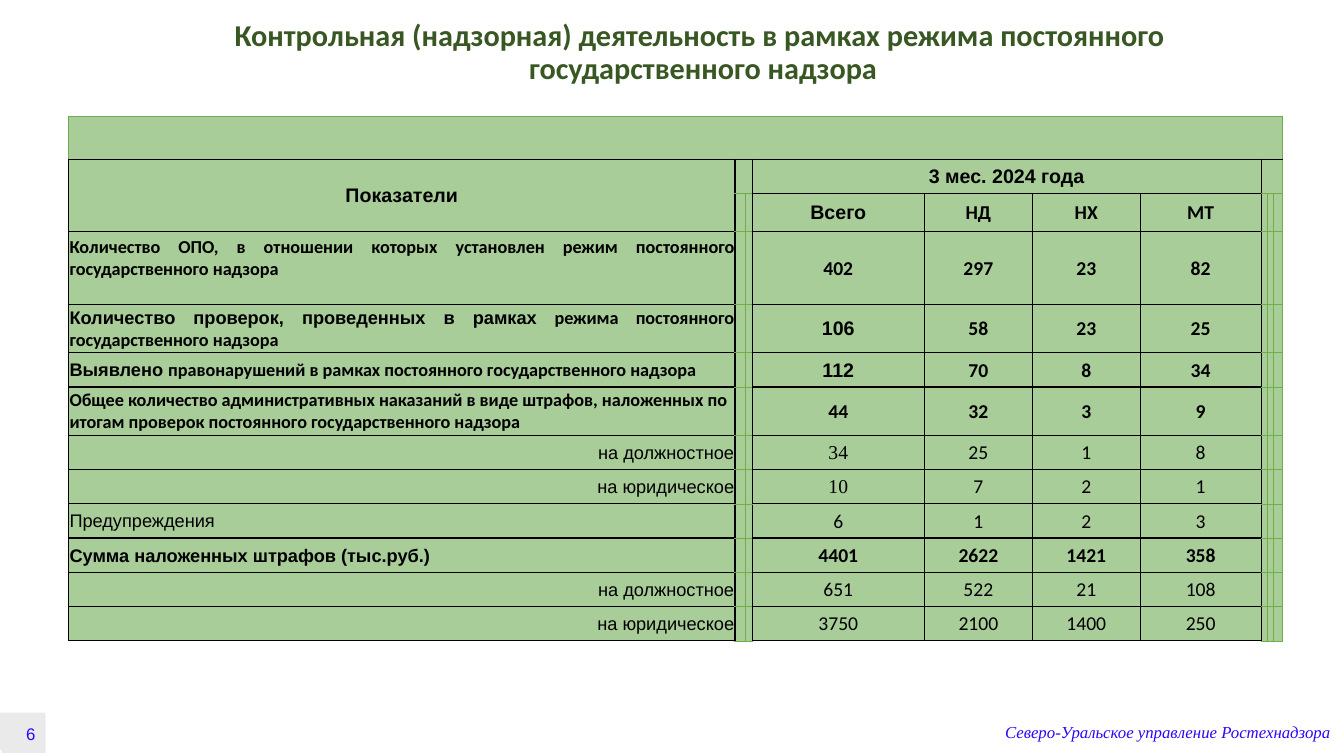
from pptx import Presentation
from pptx.dml.color import RGBColor
from pptx.enum.shapes import MSO_SHAPE
from pptx.enum.text import MSO_ANCHOR, PP_ALIGN
from pptx.oxml import parse_xml
from pptx.oxml.ns import nsdecls
from pptx.util import Inches, Pt

BLACK = RGBColor(0x00, 0x00, 0x00)
GREEN = RGBColor(0x70, 0xAD, 0x47)
PALE = RGBColor(0xA9, 0xCD, 0x99)
DARK = RGBColor(0x38, 0x57, 0x23)
BLUE = RGBColor(0x31, 0x03, 0xF7)
GRAY = RGBColor(0xEA, 0xEA, 0xEA)
SANS, BODY, SERIF = "Arial", "Calibri", "Times New Roman"
LEFT, RIGHT = PP_ALIGN.LEFT, PP_ALIGN.RIGHT
MID, FULL = PP_ALIGN.CENTER, PP_ALIGN.JUSTIFY

WIDTHS = [6.61, 0.1, 0.07, 1.71, 1.07, 1.07, 1.2, 0.05, 0.06, 0.09]
HEIGHTS = [0.43, 0.34, 0.38, 0.72, 0.48, 0.34, 0.48] + [0.34] * 6
HEADS = ["Всего", "НД", "НХ", "МТ"]
# Label runs, label alignment, bold, font of the total, values
ROWS = [
    ([("Количество ОПО, в отношении которых установлен режим постоянного "
       "государственного надзора", BODY)], FULL, True, BODY, (402, 297, 23, 82)),
    ([("Количество проверок, проведенных в рамках ", SANS),
      ("режима постоянного государственного надзора", BODY)],
     FULL, True, SANS, (106, 58, 23, 25)),
    ([("Выявлено ", SANS),
      ("правонарушений в рамках постоянного государственного надзора", BODY)],
     FULL, True, SANS, (112, 70, 8, 34)),
    ([("Общее количество административных наказаний в виде штрафов, наложенных "
       "по итогам проверок постоянного государственного надзора", BODY)],
     LEFT, True, BODY, (44, 32, 3, 9)),
    ([("на должностное", SANS)], RIGHT, False, SERIF, (34, 25, 1, 8)),
    ([("на юридическое", SANS)], RIGHT, False, SERIF, (10, 7, 2, 1)),
    ([("Предупреждения", SANS)], FULL, False, BODY, (6, 1, 2, 3)),
    ([("Сумма наложенных штрафов (тыс.руб.)", SANS)],
     FULL, True, BODY, (4401, 2622, 1421, 358)),
    ([("на должностное", SANS)], RIGHT, False, BODY, (651, 522, 21, 108)),
    ([("на юридическое", SANS)], RIGHT, False, BODY, (3750, 2100, 1400, 250)),
]


class Page:
    def __init__(self, slide):
        self.shapes = slide.shapes

    def label(self, frame, runs, size, color, align, bold=False, italic=False):
        par = frame.paragraphs[0]
        par.alignment = align
        font = par.font
        font.size, font.bold, font.italic = Pt(size), bold, italic
        font.color.rgb = color
        if len(runs) == 1:
            font.name = runs[0][1]
        for text, name in runs:
            run = par.add_run()
            run.text = text
            if len(runs) > 1:
                run.font.name = name
        return par

    def text(self, box, runs, size, color, align, **style):
        frame = self.shapes.add_textbox(*map(Inches, box)).text_frame
        frame.word_wrap = True
        frame.vertical_anchor = MSO_ANCHOR.MIDDLE
        return self.label(frame, runs, size, color, align, **style)

    def rect(self, box):
        shape = self.shapes.add_shape(MSO_SHAPE.RECTANGLE, *map(Inches, box))
        shape.shadow.inherit = False
        shape.fill.solid()
        shape.fill.fore_color.rgb = GRAY
        shape.line.fill.background()
        shape.text_frame.vertical_anchor = MSO_ANCHOR.MIDDLE
        return shape.text_frame

    def table(self, x, y, widths, heights):
        grid = self.shapes.add_table(
            len(heights), len(widths), Inches(x), Inches(y),
            Inches(sum(widths)), Inches(sum(heights))).table
        grid.first_row = grid.horz_banding = False
        for col, width in zip(grid.columns, widths):
            col.width = Inches(width)
        for row, height in zip(grid.rows, heights):
            row.height = Inches(height)
        return grid

    def edges(self, cell, black):
        props = cell._tc.get_or_add_tcPr()
        for spot, side in enumerate("LRTB"):
            color, width = (BLACK, Pt(1)) if side in black else (GREEN, Pt(0.5))
            props.insert(spot, parse_xml(
                f'<a:ln{side} {nsdecls("a")} w="{width}"><a:solidFill>'
                f'<a:srgbClr val="{color}"/></a:solidFill></a:ln{side}>'))

    def cell(self, cell, black):
        cell.fill.solid()
        cell.fill.fore_color.rgb = PALE
        cell.margin_left = cell.margin_right = cell.margin_top = Inches(0.01)
        cell.margin_bottom = 0
        cell.vertical_anchor = MSO_ANCHOR.MIDDLE
        cell.text_frame.paragraphs[0].font.size = Pt(8)
        self.edges(cell, black)


def main():
    deck = Presentation()
    deck.slide_width, deck.slide_height = Inches(13.33), Inches(7.5)
    page = Page(deck.slides.add_slide(deck.slide_layouts[6]))

    # Title
    title = page.text((1.31, 0.18, 11.33, 0.69), [], 21.6, DARK, MID, bold=True)
    title.text = ("Контрольная (надзорная) деятельность в рамках режима постоянного "
                  "\vгосударственного надзора")
    title.font.name = BODY
    title.line_spacing = 0.9

    # Table grid: narrow spacer columns have mostly green edges
    grid = page.table(0.68, 1.15, WIDTHS, HEIGHTS)
    spacer = {1: "L", 2: "R", 7: "L", 8: "", 9: ""}
    for row in range(len(HEIGHTS)):
        for col in range(len(WIDTHS)):
            black = "B" if row == 0 else spacer.get(col, "LRTB")
            page.cell(grid.cell(row, col), black)
    for top, left, low, right in [(0, 0, 0, 9), (1, 0, 2, 0), (1, 1, 1, 2),
                                  (1, 3, 1, 6), (1, 7, 1, 9)]:
        grid.cell(top, left).merge(grid.cell(low, right))

    # Table headings
    def fill(row, col, runs, size, align, bold):
        frame = grid.cell(row, col).text_frame
        page.label(frame, runs, size, BLACK, align, bold)

    fill(1, 0, [("Показатели", SANS)], 14, MID, True)
    fill(1, 3, [("3 мес. 2024 года", SANS)], 14, MID, True)
    for col, head in enumerate(HEADS, 3):
        fill(2, col, [(head, SANS if col == 3 else BODY)], 14, MID, True)

    # Table rows
    for row, (runs, align, bold, face, values) in enumerate(ROWS, 3):
        fill(row, 0, runs, 13, align, bold)
        for col, value in enumerate(values, 3):
            name = face if col == 3 else BODY
            fill(row, col, [(str(value), name)], 14, MID, bold)
    grid.cell(3, 0).margin_bottom = Inches(0.2)

    # Footer and page number
    page.rect((0, 7.07, 0.45, 0.37))
    page.text((9.87, 7.01, 3.52, 0.5),
              [("Северо-Уральское управление Ростехнадзора", SERIF)],
              12, BLUE, LEFT, italic=True)
    number = page.rect((0.02, 7.1, 0.43, 0.37))
    page.label(number, [("6", SANS)], 12, BLUE, RIGHT)

    deck.save("out.pptx")


if __name__ == "__main__":
    main()
